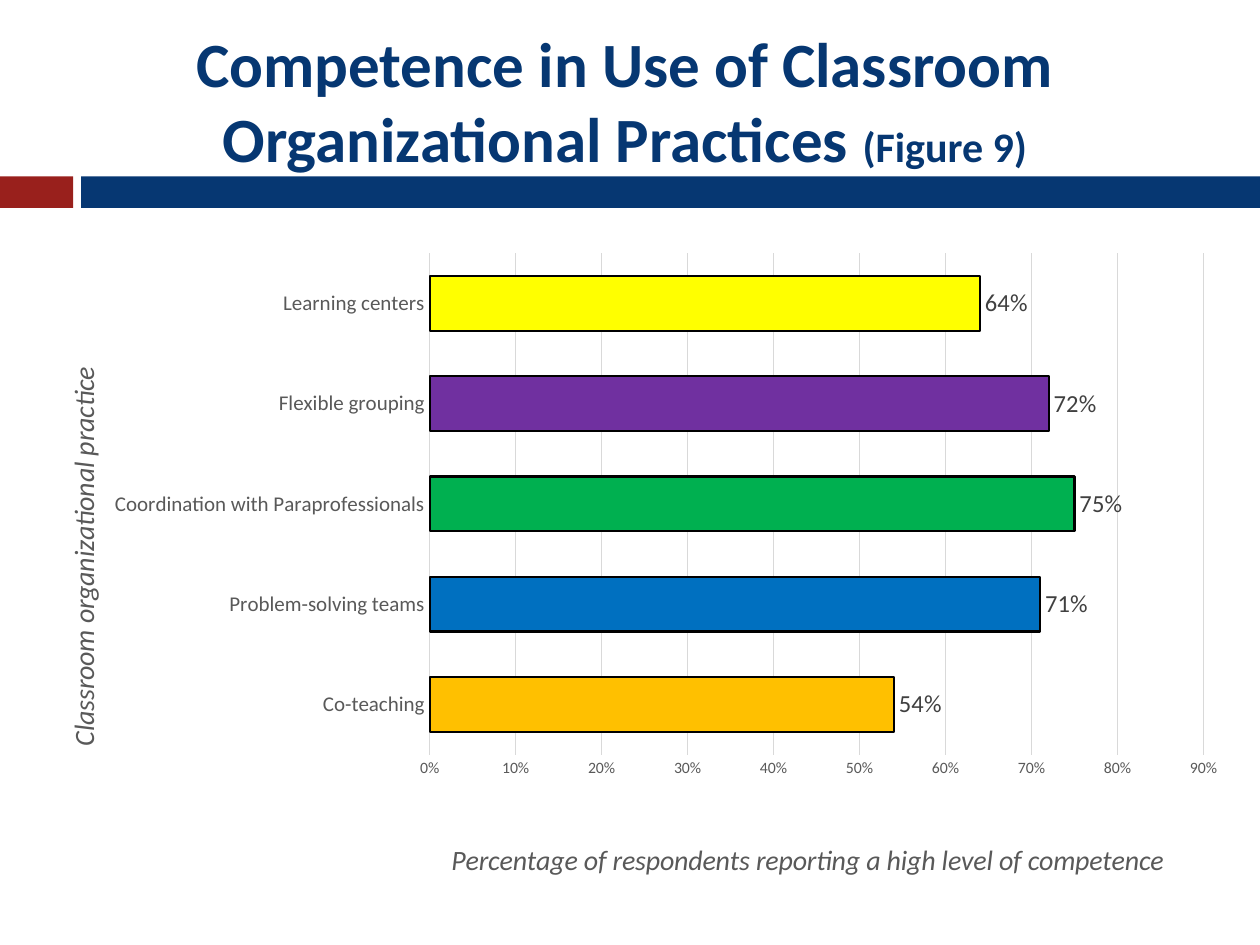
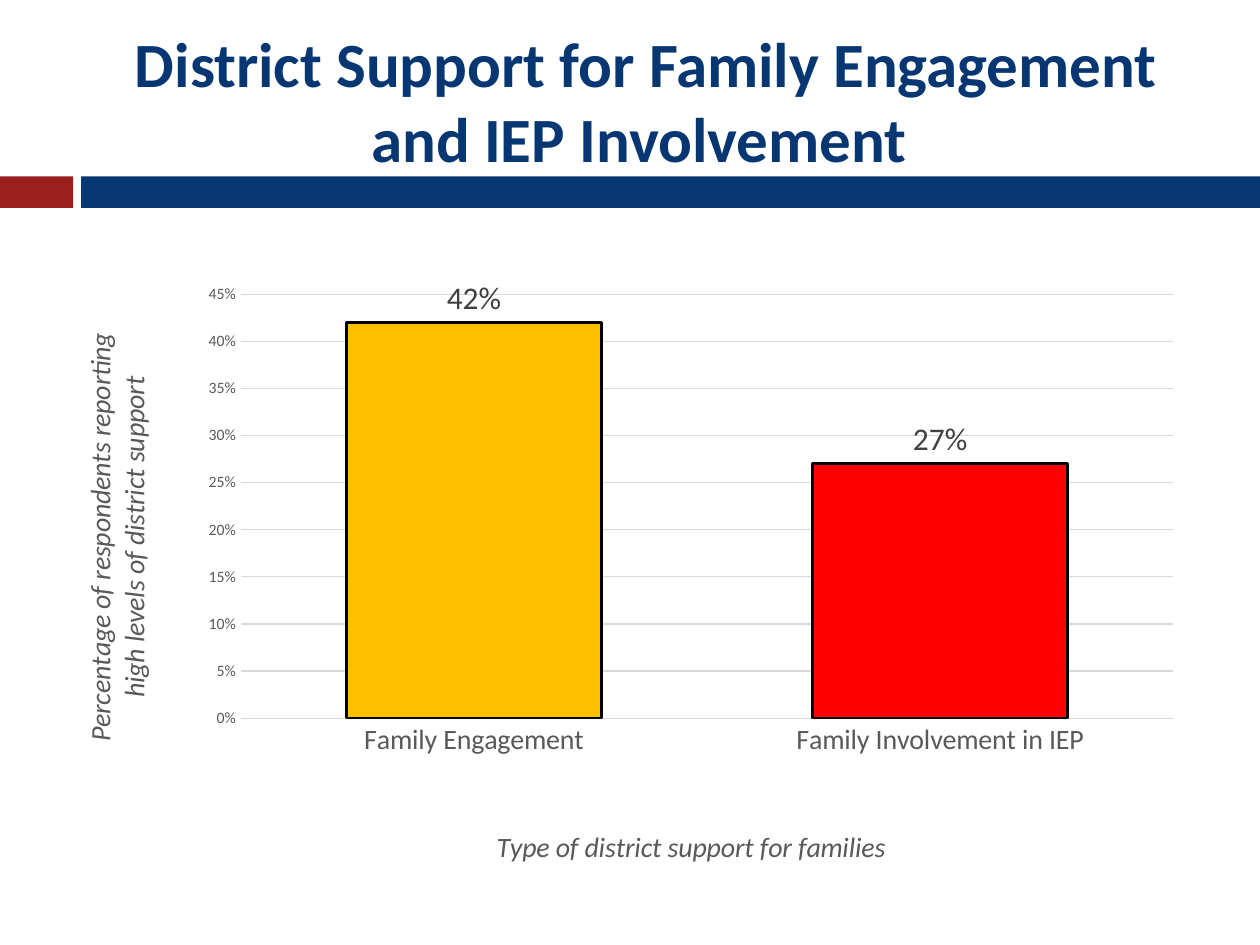
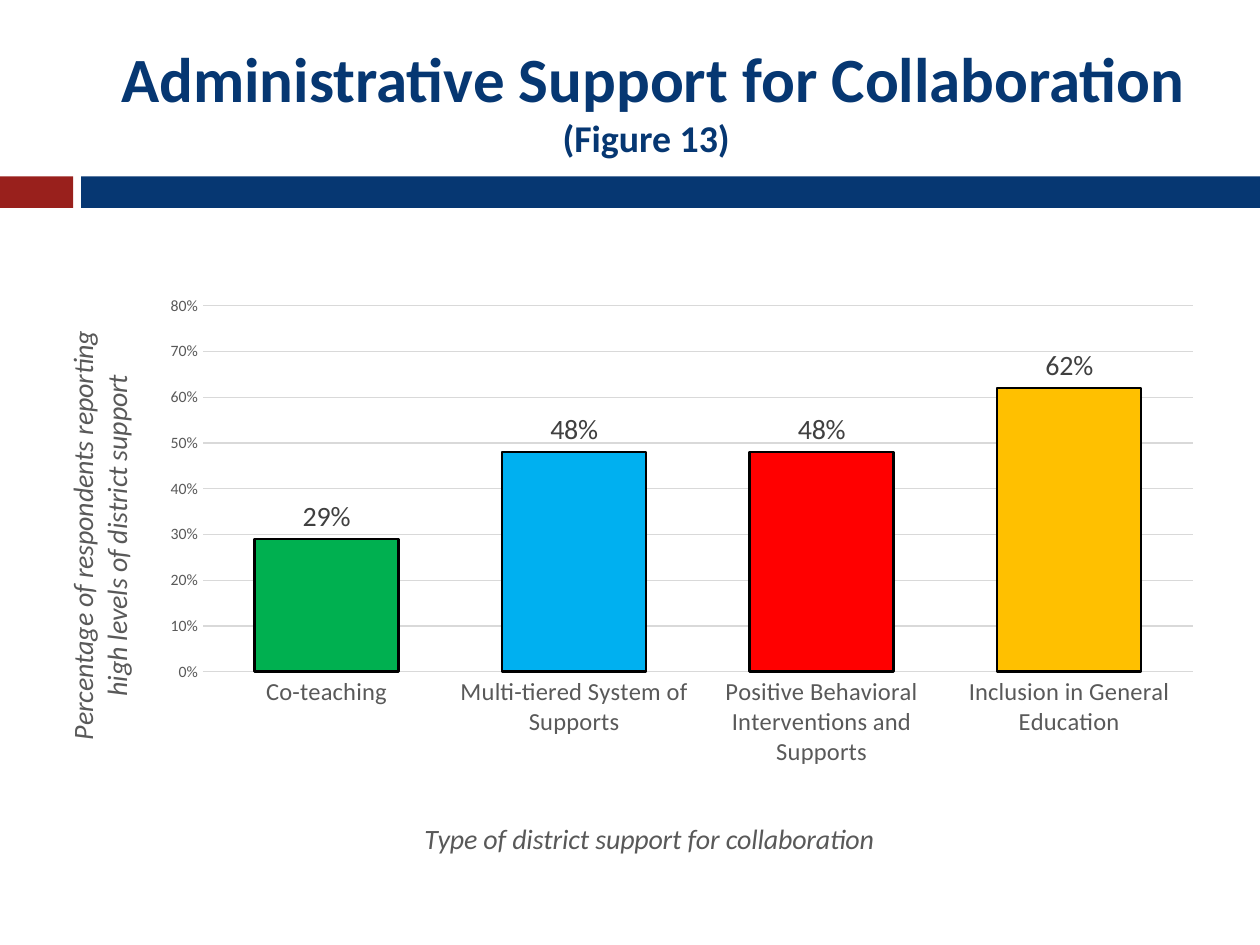
"""Build three slides of survey results, each a title over a band and a bar chart."""
from lxml import etree
from pptx import Presentation
from pptx.chart.data import CategoryChartData
from pptx.dml.color import RGBColor
from pptx.enum.chart import XL_CHART_TYPE as CT, XL_LABEL_POSITION as LP, XL_TICK_MARK as TM
from pptx.enum.shapes import MSO_SHAPE
from pptx.enum.text import MSO_ANCHOR, PP_ALIGN
from pptx.oxml.ns import qn
from pptx.util import Pt

FONT = "Calibri"
NAVY, RED, GRAY, DARK, GRID, BLACK = "063772", "99201C", "595959", "404040", "D9D9D9", "000000"
BANDS = [(0, 41.8, RED), (46.4, 673.6, NAVY)]
BAND_TOP, BAND_H = 100.8, 18
TITLE_TOP, TITLE_H = 18, 77.8
SUPPORT = "Percentage of respondents reporting\nhigh levels of district support"

SLIDES = [
    {
        "title": [("Competence in Use of Classroom Organizational Practices ", 36), ("(Figure 9)", 24)],
        "title_x": (12.2, 689.8),
        "type": CT.BAR_CLUSTERED,
        "box": (24.5, 144, 678.2, 378),
        "plot": (0.326, 0.002, 0.652, 0.758),
        "bars": [
            ("Co-teaching", 0.54, "FFC000"),
            ("Problem-solving teams", 0.71, "0070C0"),
            ("Coordination with Paraprofessionals", 0.75, "00B050"),
            ("Flexible grouping", 0.72, "7030A0"),
            ("Learning centers", 0.64, "FFFF00"),
        ],
        "cat_title": ("Classroom organizational practice", 0.014, 0.166),
        "val_title": ("Percentage of respondents reporting a high level of competence", 0.34, 0.883),
        "cat_size": 12, "label_size": 14, "max": 0.9, "step": 0.1, "gap": 83, "line": 1.25,
    },
    {
        "title": [("District Support for Family Engagement and IEP Involvement ", 36)],
        "title_x": (48.2, 642.2),
        "type": CT.COLUMN_CLUSTERED,
        "box": (23.8, 126, 666, 390.2),
        "plot": (0.171, 0.108, 0.8, 0.621),
        "bars": [
            ("Family Engagement", 0.42, "FFC000"),
            ("Family Involvement in IEP", 0.27, "FF0000"),
        ],
        "cat_title": ("Type of district support for families", 0.386, 0.882),
        "val_title": (SUPPORT, 0.031, 0.159),
        "cat_size": 16, "label_size": 18, "max": 0.45, "step": 0.05, "gap": 83, "line": 1.5,
    },
    {
        "title": [(" Administrative Support for Collaboration ", 36), ("(Figure 13)", 21.6)],
        "title_x": (48.2, 642.2),
        "type": CT.COLUMN_CLUSTERED,
        "box": (23.8, 126, 672, 372.2),
        "plot": (0.137, 0.131, 0.842, 0.562),
        "bars": [
            ("Co-teaching", 0.29, "00B050"),
            ("Multi-tiered System of Supports", 0.48, "00B0F0"),
            ("Positive Behavioral Interventions and Supports", 0.48, "FF0000"),
            ("Inclusion in General Education", 0.62, "FFC000"),
        ],
        "cat_title": ("Type of district support for collaboration", 0.321, 0.913),
        "val_title": (SUPPORT, 0.016, 0.164),
        "cat_size": 14, "label_size": 16, "max": 0.8, "step": 0.1, "gap": 72, "line": 1.5,
    },
]


def rgb(color):
    return RGBColor.from_string(color)


def set_all(obj, **values):
    for name, value in values.items():
        setattr(obj, name, value)


def set_font(font, size, color, **values):
    set_all(font, name=FONT, size=Pt(size), **values)
    font.color.rgb = rgb(color)


def set_line(line, color, width):
    line.color.rgb = rgb(color)
    line.width = Pt(width)


def set_layout(parent, index, **values):
    for old in parent.findall(qn("c:layout")):
        parent.remove(old)
    layout = etree.Element(qn("c:layout"))
    manual = etree.SubElement(layout, qn("c:manualLayout"))
    for tag, value in values.items():
        etree.SubElement(manual, qn("c:" + tag)).set("val", str(value))
    parent.insert(index, layout)


def add_bands(s):
    for left, width, color in BANDS:
        sp = s.shapes.add_shape(MSO_SHAPE.RECTANGLE, Pt(left), Pt(BAND_TOP), Pt(width), Pt(BAND_H))
        sp.shadow.inherit = False
        sp.fill.solid()
        sp.fill.fore_color.rgb = rgb(color)
        sp.line.fill.background()


def add_title(s, runs, left, width):
    tf = s.shapes.add_textbox(Pt(left), Pt(TITLE_TOP), Pt(width), Pt(TITLE_H)).text_frame
    set_all(tf, word_wrap=True, vertical_anchor=MSO_ANCHOR.MIDDLE)
    p = tf.paragraphs[0]
    p.alignment = PP_ALIGN.CENTER
    for text, size in runs:
        r = p.add_run()
        r.text = text
        set_font(r.font, size, NAVY, bold=True)


def style_axis(axis, size, title, upright):
    set_all(axis, major_tick_mark=TM.NONE, minor_tick_mark=TM.NONE)
    set_font(axis.tick_labels.font, size, GRAY)
    text, x, y = title
    tf = axis.axis_title.text_frame
    tf.text = text
    for p in tf.paragraphs:
        p.alignment = PP_ALIGN.CENTER
        set_font(p.font, 16, GRAY, bold=False, italic=True)
        for r in p.runs:
            set_font(r.font, 16, GRAY, bold=False, italic=True)
    el = axis.axis_title._element
    body = el.find(".//" + qn("a:bodyPr"))
    body.set("rot", "-5400000" if upright else "0")
    body.set("vert", "horz")
    set_layout(el, 1, xMode="edge", yMode="edge", x=x, y=y)


def add_bar_chart(s, d):
    names, values, colors = zip(*d["bars"])
    data = CategoryChartData(number_format="0%")
    data.categories = names
    data.add_series("Series 1", values)
    chart = s.shapes.add_chart(d["type"], *map(Pt, d["box"]), data).chart
    set_all(chart, has_legend=False, has_title=False)
    set_font(chart.font, 10, BLACK)

    plot = chart.plots[0]
    set_all(plot, gap_width=d["gap"], vary_by_categories=False, has_data_labels=True)
    set_all(plot.data_labels, show_value=True, position=LP.OUTSIDE_END,
            number_format="0%", number_format_is_linked=False)
    set_font(plot.data_labels.font, d["label_size"], DARK)
    for i, color in enumerate(colors):
        fmt = plot.series[0].points[i].format
        fmt.fill.solid()
        fmt.fill.fore_color.rgb = rgb(color)
        set_line(fmt.line, BLACK, d["line"])

    flat = d["type"] == CT.BAR_CLUSTERED
    cat, val = chart.category_axis, chart.value_axis
    style_axis(cat, d["cat_size"], d["cat_title"], flat)
    style_axis(val, 9, d["val_title"], not flat)
    set_line(cat.format.line, GRID, 0.75)
    set_all(val, minimum_scale=0, maximum_scale=d["max"], major_unit=d["step"], has_major_gridlines=True)
    set_all(val.tick_labels, number_format="0%", number_format_is_linked=False)
    val.format.line.fill.background()
    set_line(val.major_gridlines.format.line, GRID, 0.75)

    x, y, w, h = d["plot"]
    area = chart._chartSpace.find(".//" + qn("c:plotArea"))
    set_layout(area, 0, layoutTarget="inner", xMode="edge", yMode="edge", x=x, y=y, w=w, h=h)


def main():
    prs = Presentation()
    set_all(prs, slide_width=Pt(720), slide_height=Pt(540))
    for d in SLIDES:
        s = prs.slides.add_slide(prs.slide_layouts[6])
        add_bands(s)
        add_title(s, d["title"], *d["title_x"])
        add_bar_chart(s, d)
    prs.save("out.pptx")


if __name__ == "__main__":
    main()
